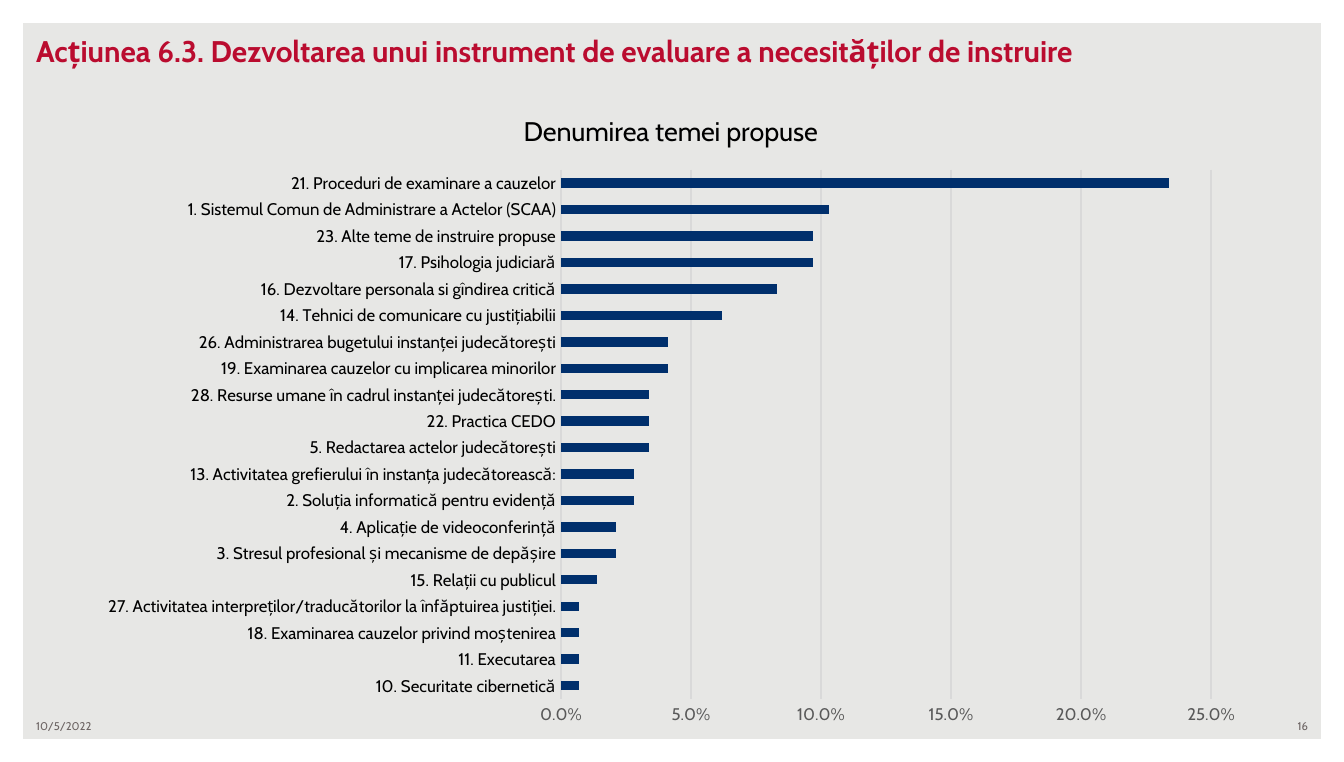
from dataclasses import dataclass

from lxml.etree import SubElement
from pptx import Presentation
from pptx.chart.data import CategoryChartData
from pptx.dml.color import RGBColor
from pptx.enum.chart import XL_CHART_TYPE as ChartType, XL_TICK_MARK as TickMark
from pptx.enum.shapes import MSO_SHAPE as Preset
from pptx.enum.text import MSO_ANCHOR as Anchor, PP_ALIGN as Align
from pptx.oxml.ns import qn
from pptx.util import Inches, Pt

WIDTH, HEIGHT = Inches(10), Inches(5.67)
FONT = "Cabin"
BLACK, GREY, RULE = "000000", "595959", "D9D9D9"
NAVY, RED, FOOTER = "002F6C", "BA0C2F", "6C6463"

TOPICS = [
    ("21. Proceduri de examinare a cauzelor", 0.234),
    ("1. Sistemul Comun de Administrare a Actelor (SCAA)", 0.103),
    ("23. Alte teme de instruire propuse", 0.097),
    ("17. Psihologia judiciară", 0.097),
    ("16. Dezvoltare personala si gîndirea critică", 0.083),
    ("14. Tehnici de comunicare cu justițiabilii", 0.062),
    ("26. Administrarea bugetului instanței judecătorești", 0.041),
    ("19. Examinarea cauzelor cu implicarea minorilor", 0.041),
    ("28. Resurse umane în cadrul instanței judecătorești.", 0.034),
    ("22. Practica CEDO", 0.034),
    ("5. Redactarea actelor judecătorești", 0.034),
    ("13. Activitatea grefierului în instanța judecătorească:", 0.028),
    ("2. Soluția informatică pentru evidență", 0.028),
    ("4. Aplicație de videoconferință", 0.021),
    ("3. Stresul profesional și mecanisme de depășire", 0.021),
    ("15. Relații cu publicul", 0.014),
    ("27. Activitatea interpreților/traducătorilor la înfăptuirea justiției.", 0.007),
    ("18. Examinarea cauzelor privind moștenirea", 0.007),
    ("11. Executarea", 0.007),
    ("10. Securitate cibernetică", 0.007),
]


@dataclass
class Area:
    left: float
    top: float
    width: float
    height: float

    def lengths(self) -> tuple[int, int, int, int]:
        return (int(self.left * WIDTH), int(self.top * HEIGHT),
                int(self.width * WIDTH), int(self.height * HEIGHT))


@dataclass
class Label:
    text: str
    area: Area
    size: float
    color: str
    bold: bool = False
    align: Align = Align.LEFT
    anchor: Anchor = Anchor.MIDDLE


LABELS = [
    Label("10/5/2022", Area(0.017, 0.935, 0.233, 0.035), 6, FOOTER),
    Label("16", Area(0.75, 0.935, 0.233, 0.035), 6, FOOTER, align=Align.RIGHT),
    Label("Acțiunea 6.3. Dezvoltarea unui instrument de evaluare a necesităților de instruire",
          Area(0.017, 0.0345, 0.903, 0.0935), 16, RED, bold=True, anchor=Anchor.TOP),
]


def rgb(color: str) -> RGBColor:
    return RGBColor.from_string(color)


def set_font(font, size: float, color: str, bold: bool = False) -> None:
    font.name, font.size, font.bold = FONT, Pt(size), bold
    font.color.rgb = rgb(color)


def set_line(line, color: str) -> None:
    line.color.rgb = rgb(color)
    line.width = Pt(0.75)


def draw_frame(page) -> None:
    page.background.fill.solid()
    page.background.fill.fore_color.rgb = rgb("E7E7E5")
    frame = page.shapes.add_shape(Preset.FRAME, *Area(0, 0, 1, 1).lengths())
    frame.adjustments[0] = 0.03
    frame.shadow.inherit = False
    frame.fill.solid()
    frame.fill.fore_color.rgb = rgb("FFFFFF")
    frame.line.fill.background()


def draw_label(page, label: Label) -> None:
    box = page.shapes.add_textbox(*label.area.lengths())
    box.text_frame.word_wrap = True
    box.text_frame.vertical_anchor = label.anchor
    para = box.text_frame.paragraphs[0]
    para.text, para.alignment = label.text, label.align
    set_font(para.font, label.size, label.color, label.bold)


def place(element, successor: str, **settings) -> None:
    for old in element.findall(qn("c:layout")):
        element.remove(old)
    layout = SubElement(element, qn("c:layout"))
    manual = SubElement(layout, qn("c:manualLayout"))
    for name, value in settings.items():
        SubElement(manual, qn(f"c:{name}"), val=str(value))
    element.find(qn(successor)).addprevious(layout)


def draw_chart(page) -> None:
    names, shares = zip(*reversed(TOPICS))
    data = CategoryChartData(number_format="###0.0%")
    data.categories = names
    data.add_series("Series 1", shares)
    area = Area(0.063, 0.1165, 0.873, 0.852)
    chart = page.shapes.add_chart(ChartType.BAR_CLUSTERED, *area.lengths(), data).chart
    set_font(chart.font, 10, BLACK)
    chart.has_legend = False

    para = chart.chart_title.text_frame.paragraphs[0]
    para.text = "Denumirea temei propuse"
    set_font(para.font, 14.4, BLACK)
    chart.chart_title.include_in_layout = False
    place(chart.chart_title._element, "c:overlay",
          xMode="edge", yMode="edge", x=0.37, y=0.03)
    place(chart.plots[0]._element.getparent(), "c:barChart",
          layoutTarget="inner", xMode="edge", yMode="edge",
          x=0.406, y=0.125, w=0.554, h=0.815)

    plot = chart.plots[0]
    plot.gap_width = 182
    plot.vary_by_categories = False
    fill = plot.series[0].format.fill
    fill.solid()
    fill.fore_color.rgb = rgb(NAVY)

    for axis, color in ((chart.category_axis, BLACK), (chart.value_axis, GREY)):
        axis.major_tick_mark = axis.minor_tick_mark = TickMark.NONE
        set_font(axis.tick_labels.font, 9, color)
    chart.category_axis.has_major_gridlines = False
    set_line(chart.category_axis.format.line, RULE)

    scale = chart.value_axis
    scale.minimum_scale, scale.maximum_scale, scale.major_unit = 0, 0.25, 0.05
    scale.format.line.fill.background()
    set_line(scale.major_gridlines.format.line, RULE)
    scale.tick_labels.number_format = "###0.0%"
    scale.tick_labels.number_format_is_linked = False


def main() -> None:
    deck = Presentation()
    deck.slide_width, deck.slide_height = WIDTH, HEIGHT
    page = deck.slides.add_slide(deck.slide_layouts[6])
    draw_frame(page)
    for label in LABELS:
        draw_label(page, label)
    draw_chart(page)
    deck.save("out.pptx")


if __name__ == "__main__":
    main()
